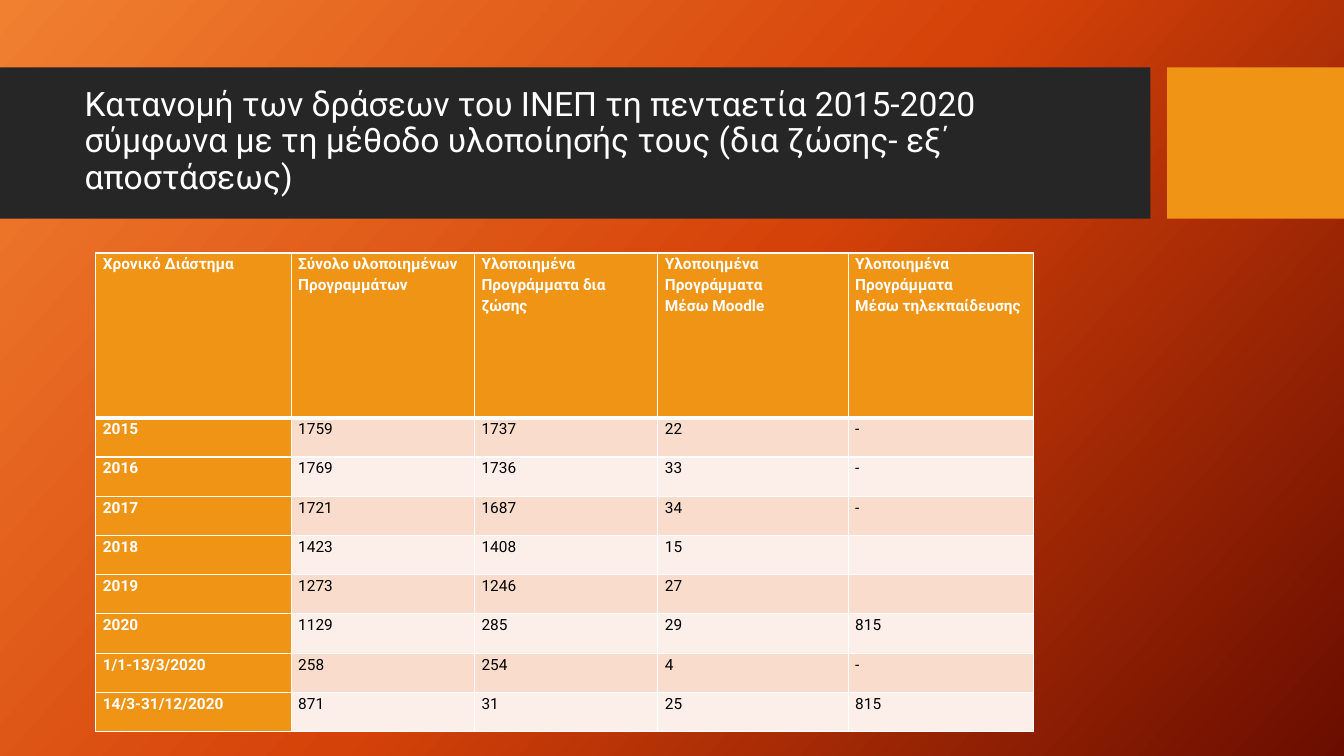
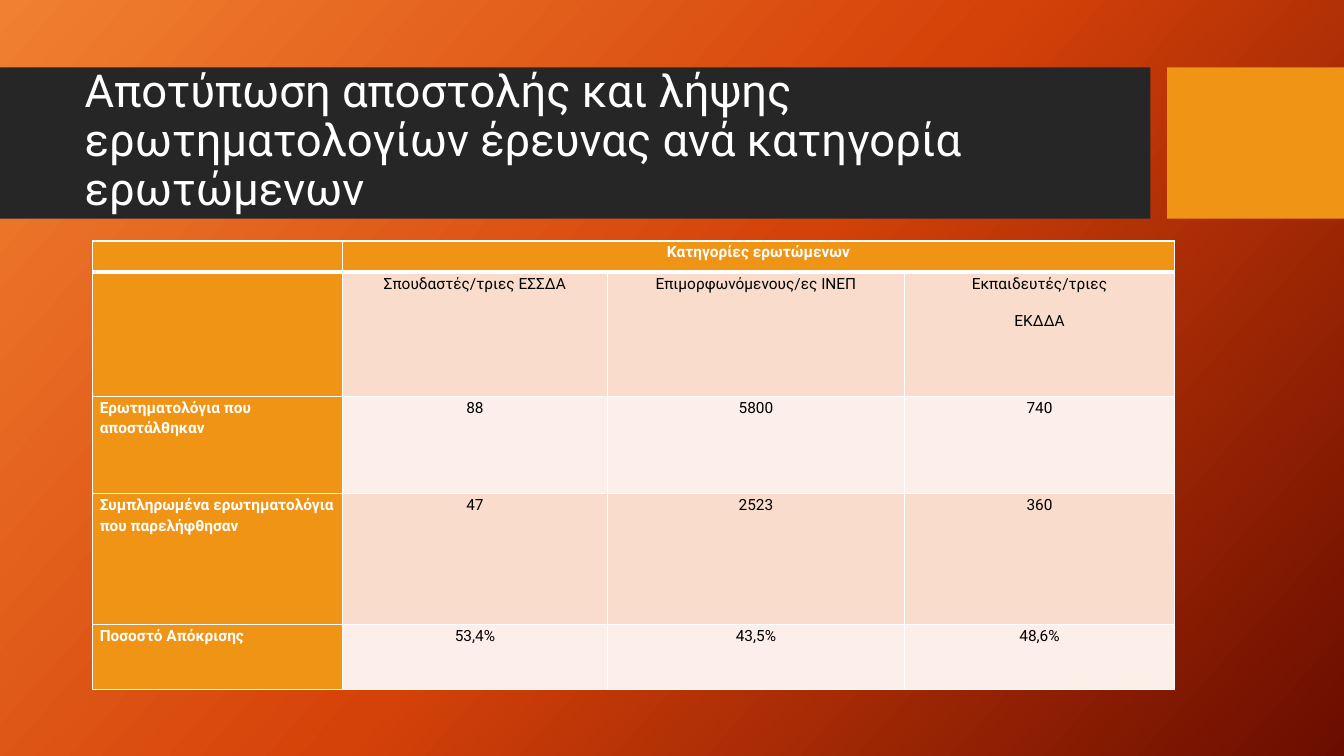
from copy import deepcopy
from dataclasses import dataclass

from lxml.etree import SubElement
from pptx import Presentation
from pptx.dml.color import RGBColor
from pptx.enum.shapes import MSO_SHAPE as Preset
from pptx.enum.text import MSO_ANCHOR as Anchor, MSO_AUTO_SIZE as AutoSize, PP_ALIGN as Align
from pptx.oxml.ns import qn
from pptx.util import Inches, Pt

SLIDE_WIDTH, SLIDE_HEIGHT = Inches(13.33), Inches(7.5)
FONT = "Roboto"
COLORS = {
    "white": "FFFFFF",
    "black": "000000",
    "band": "262626",
    "accent": "F09415",
    "odd_row": "F9DCCC",
    "even_row": "FCEEE8",
}
BACKDROP = ((0, "F18031"), (0.5, "D54209"), (1, "6A0D00"))
BACKDROP_ANGLE = 42
TABLE_SIZE = 11
THIN, THICK = 1, 3


@dataclass(frozen=True)
class Area:
    """A rectangle in percent of the slide's width and height."""
    left: float
    top: float
    width: float
    height: float

    def box(self) -> tuple[int, int, int, int]:
        return (round(SLIDE_WIDTH * self.left / 100), round(SLIDE_HEIGHT * self.top / 100),
                round(SLIDE_WIDTH * self.width / 100), round(SLIDE_HEIGHT * self.height / 100))


@dataclass(frozen=True)
class Band:
    area: Area
    color: str


@dataclass(frozen=True)
class TableSlide:
    """Column and row shares divide the table's area; a line break parts paragraphs."""
    title: str
    title_size: float
    area: Area
    column_shares: tuple[float, ...]
    row_shares: tuple[float, ...]
    rows: tuple[tuple[str, ...], ...]
    value_align: Align = Align.LEFT
    paragraph_gap: float = 0
    joined_header: bool = False


BANDS = (
    Band(Area(0, 8.93, 85.6, 20), "band"),
    Band(Area(86.85, 8.93, 13.15, 20), "accent"),
)
TITLE_AREA = Area(5.55, 10.93, 78.85, 15.73)

SLIDES = (
    TableSlide(
        title="Κατανομή των δράσεων του ΙΝΕΠ τη πενταετία 2015-2020 σύμφωνα με τη μέθοδο "
              "υλοποίησής τους (δια ζώσης- εξ΄ αποστάσεως)",
        title_size=24,
        area=Area(7.13, 33.47, 69.77, 63.33),
        column_shares=(1.94, 1.82, 1.82, 1.89, 1.84),
        row_shares=(4.2,) + (1,) * 8,
        rows=(
            ("Χρονικό Διάστημα", "Σύνολο υλοποιημένων Προγραμμάτων",
             "Υλοποιημένα Προγράμματα δια ζώσης",
             "Υλοποιημένα Προγράμματα\nΜέσω Moodle",
             "Υλοποιημένα Προγράμματα\nΜέσω τηλεκπαίδευσης"),
            ("2015", "1759", "1737", "22", "-"),
            ("2016", "1769", "1736", "33", "-"),
            ("2017", "1721", "1687", "34", "-"),
            ("2018", "1423", "1408", "15", ""),
            ("2019", "1273", "1246", "27", ""),
            ("2020", "1129", "285", "29", "815"),
            ("1/1-13/3/2020", "258", "254", "4", "-"),
            ("14/3-31/12/2020", "871", "31", "25", "815"),
        ),
    ),
    TableSlide(
        title="Αποτύπωση αποστολής και λήψης ερωτηματολογίων έρευνας ανά κατηγορία ερωτώμενων",
        title_size=32.4,
        area=Area(6.9, 31.87, 80.5, 59.33),
        column_shares=(2.48, 2.63, 2.95, 2.68),
        row_shares=(0.31, 1.23, 0.97, 1.3, 0.64),
        rows=(
            ("", "Κατηγορίες ερωτώμενων", "", ""),
            ("", "Σπουδαστές/τριες ΕΣΣΔΑ", "Επιμορφωνόμενους/ες ΙΝΕΠ",
             "Εκπαιδευτές/τριες\nΕΚΔΔΑ"),
            ("Ερωτηματολόγια που αποστάλθηκαν", "88", "5800", "740"),
            ("Συμπληρωμένα ερωτηματολόγια που παρελήφθησαν", "47", "2523", "360"),
            ("Ποσοστό Απόκρισης", "53,4%", "43,5%", "48,6%"),
        ),
        value_align=Align.CENTER,
        paragraph_gap=12,
        joined_header=True,
    ),
)


def rgb(name: str) -> RGBColor:
    return RGBColor.from_string(COLORS[name])


def style_paragraph(paragraph, size: float, color: str, bold: bool, spacing: float,
                    align: Align) -> None:
    paragraph.line_spacing = spacing
    paragraph.alignment = align
    for run in paragraph.runs:
        run.font.name = FONT
        run.font.size = Pt(size)
        run.font.bold = bold
        run.font.color.rgb = rgb(color)


def paint_backdrop(layout) -> None:
    fill = layout.background.fill
    fill.gradient()
    stop_list = next(layout.element.iter(qn("a:gsLst")))
    stop_list.append(deepcopy(stop_list[-1]))
    for stop, (position, color) in zip(fill.gradient_stops, BACKDROP):
        stop.position = position
        stop.color.rgb = RGBColor.from_string(color)
    fill.gradient_angle = 360 - BACKDROP_ANGLE  # python-pptx counts anticlockwise


def prepare_layout(layout) -> None:
    """Set the backdrop and title place, and drop the unused footer placeholders."""
    paint_backdrop(layout)
    for placeholder in list(layout.placeholders):
        if placeholder.placeholder_format.idx == 0:
            (placeholder.left, placeholder.top,
             placeholder.width, placeholder.height) = TITLE_AREA.box()
        else:
            placeholder.element.getparent().remove(placeholder.element)


def move_bands_to_layout(slide, layout) -> None:
    """Draw the bands on a slide, then hand them to the layout, behind its title."""
    shapes = []
    for band in BANDS:
        shape = slide.shapes.add_shape(Preset.RECTANGLE, *band.area.box())
        shape.shadow.inherit = False
        shape.fill.solid()
        shape.fill.fore_color.rgb = rgb(band.color)
        shape.line.fill.background()
        shapes.append(shape)
    for position, shape in enumerate(shapes, start=2):
        layout.shapes.element.insert(position, shape.element)


def write_title(slide, content: TableSlide) -> None:
    frame = slide.shapes.title.text_frame
    frame.text = content.title
    frame.word_wrap = True
    frame.auto_size = AutoSize.NONE
    frame.vertical_anchor = Anchor.MIDDLE
    style_paragraph(frame.paragraphs[0], content.title_size, "white", False, 0.9, Align.LEFT)


def add_borders(cell, top: float, bottom: float) -> None:
    properties = cell._tc.get_or_add_tcPr()
    for side, width in (("L", THIN), ("R", THIN), ("T", top), ("B", bottom)):
        border = SubElement(properties, qn(f"a:ln{side}"), w=str(Pt(width)))
        solid = SubElement(border, qn("a:solidFill"))
        SubElement(solid, qn("a:srgbClr"), val=COLORS["white"])


def fill_cell(cell, text: str, row: int, column: int, content: TableSlide) -> None:
    is_heading = row == 0 or column == 0
    add_borders(cell, THICK if row == 1 else THIN, THICK if row == 0 else THIN)
    cell.fill.solid()
    stripe = "odd_row" if row % 2 else "even_row"
    cell.fill.fore_color.rgb = rgb("accent" if is_heading else stripe)
    cell.margin_left = cell.margin_right = Inches(0.07)
    cell.margin_top = cell.margin_bottom = 0
    if not text:
        return
    cell.text_frame.text = text
    for index, paragraph in enumerate(cell.text_frame.paragraphs):
        style_paragraph(paragraph, TABLE_SIZE, "white" if is_heading else "black", is_heading,
                        1.15, content.value_align if column else Align.LEFT)
        if index and content.paragraph_gap:
            paragraph.space_before = Pt(content.paragraph_gap)


def draw_table(slide, content: TableSlide) -> None:
    left, top, width, height = content.area.box()
    table = slide.shapes.add_table(len(content.rows), len(content.column_shares),
                                   left, top, width, height).table
    for column, share in zip(table.columns, content.column_shares):
        column.width = round(width * share / sum(content.column_shares))
    for row, share in zip(table.rows, content.row_shares):
        row.height = round(height * share / sum(content.row_shares))
    for row_index, texts in enumerate(content.rows):
        for column_index, text in enumerate(texts):
            fill_cell(table.cell(row_index, column_index), text, row_index, column_index, content)
    if content.joined_header:
        table.cell(0, 1).merge(table.cell(0, len(content.column_shares) - 1))


def main() -> None:
    deck = Presentation()
    deck.slide_width, deck.slide_height = SLIDE_WIDTH, SLIDE_HEIGHT
    layout = deck.slide_layouts.get_by_name("Title Only")
    prepare_layout(layout)
    for number, content in enumerate(SLIDES):
        slide = deck.slides.add_slide(layout)
        if number == 0:
            move_bands_to_layout(slide, layout)
        write_title(slide, content)
        draw_table(slide, content)
    deck.save("out.pptx")


if __name__ == "__main__":
    main()
